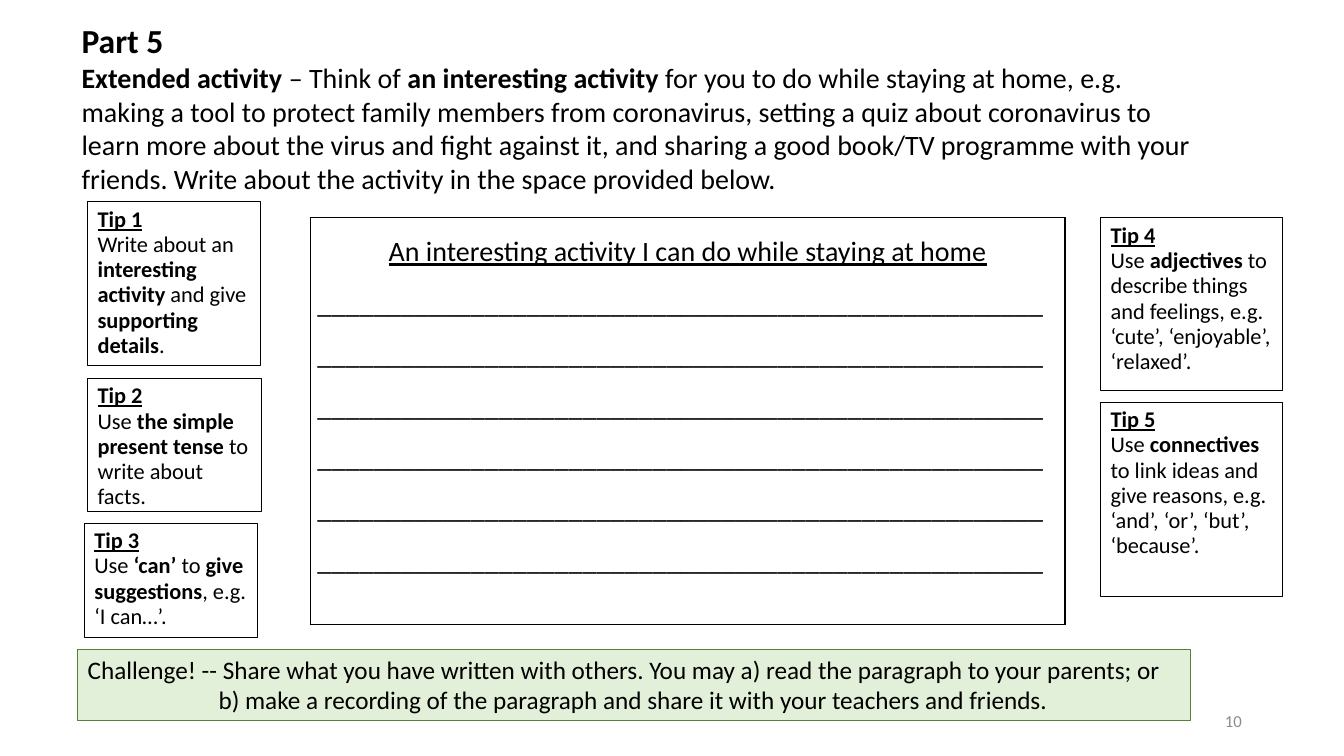
"""Build the Part 5 writing activity slide."""
from dataclasses import dataclass

from lxml import etree
from pptx import Presentation
from pptx.dml.color import RGBColor
from pptx.enum.shapes import MSO_SHAPE
from pptx.enum.text import MSO_ANCHOR, MSO_AUTO_SIZE, PP_ALIGN
from pptx.oxml.ns import qn
from pptx.util import Cm, Pt

RECT = MSO_SHAPE.RECTANGLE
TOP, MIDDLE = MSO_ANCHOR.TOP, MSO_ANCHOR.MIDDLE
LEFT, CENTER, RIGHT = PP_ALIGN.LEFT, PP_ALIGN.CENTER, PP_ALIGN.RIGHT
NO_AUTOFIT = MSO_AUTO_SIZE.NONE


@dataclass(frozen=True)
class Theme:
    font: str = "Calibri"
    black: RGBColor = RGBColor(0, 0, 0)
    white: RGBColor = RGBColor(255, 255, 255)
    grey: RGBColor = RGBColor(0x8C, 0x8C, 0x8C)
    pale_green: RGBColor = RGBColor(0xE2, 0xF0, 0xD9)
    green: RGBColor = RGBColor(0x54, 0x82, 0x35)
    heading: Pt = Pt(24)
    body: Pt = Pt(20)
    challenge: Pt = Pt(18)
    tip: Pt = Pt(16)
    number: Pt = Pt(12)


T = Theme()


def write(p, text, size, color=T.black, align=LEFT):
    """Fill a paragraph, with the parts between asterisks in bold."""
    p.alignment = align
    p.font.name, p.font.size, p.font.color.rgb = T.font, size, color
    for i, part in enumerate(text.split("*")):
        if part:
            r = p.add_run()
            r.text, r.font.bold = part, i % 2 == 1


def add_box(s, place, fill, line, width):
    """Add an outlined rectangle and return its text frame."""
    sp = s.shapes.add_shape(RECT, *map(Cm, place))
    sp.shadow.inherit = False
    sp.fill.solid()
    sp.fill.fore_color.rgb = fill
    sp.line.color.rgb, sp.line.width = line, width
    tf = sp.text_frame
    tf.word_wrap, tf.vertical_anchor = True, TOP
    return tf


prs = Presentation()
prs.slide_width, prs.slide_height = Cm(33.87), Cm(19.05)
s = prs.slides.add_slide(prs.slide_layouts[5])

title = s.shapes.title
title.left, title.top, title.width, title.height = map(Cm, (1.8, 0.38, 28.98, 5.89))
tf = title.text_frame
tf.word_wrap, tf.vertical_anchor, tf.auto_size = True, TOP, NO_AUTOFIT
write(tf.paragraphs[0], "*Part 5*", T.heading)
write(
    tf.add_paragraph(),
    "*Extended activity *– Think of *an interesting activity *for you to do while "
    "staying at home, e.g. making a tool to protect family members from coronavirus, "
    "setting a quiz about coronavirus to learn more about the virus and fight against "
    "it, and sharing a good book/TV programme with your friends. Write about the "
    "activity in the space provided below.",
    T.body,
)

tips = [
    ((2.21, 5.08, 4.35, 4.14),
     "Write about an *interesting activity *and give *supporting details*."),
    ((2.21, 9.53, 4.37, 3.35),
     "Use *the simple present tense *to write about facts."),
    ((2.13, 13.18, 4.37, 2.87),
     "Use *‘can’ *to* give suggestions*, e.g. ‘I can…’."),
    ((27.74, 5.49, 4.57, 4.34),
     "Use *adjectives* to describe things and feelings, e.g. ‘cute’, ‘enjoyable’, "
     "‘relaxed’."),
    ((27.74, 10.13, 4.57, 4.9),
     "Use *connectives* to link ideas and give reasons, e.g. ‘and’, ‘or’, ‘but’, "
     "‘because’."),
]
for number, (place, advice) in enumerate(tips, 1):
    tf = add_box(s, place, T.white, T.black, Pt(0.5))
    write(tf.paragraphs[0], f"*Tip {number}*", T.tip)
    tf.paragraphs[0].font.underline = True
    write(tf.add_paragraph(), advice, T.tip)
    for p in tf.paragraphs:
        p.line_spacing = Pt(18)

table = s.shapes.add_table(1, 1, Cm(7.82), Cm(5.49), Cm(19.02), Cm(10.24)).table
table.first_row = table.horz_banding = False
cell = table.cell(0, 0)
cell.margin_left = cell.margin_right = Cm(0.18)
cell.margin_top = cell.margin_bottom = 0
tcPr = cell._tc.get_or_add_tcPr()
for side in ("a:lnL", "a:lnR", "a:lnT", "a:lnB"):
    ln = etree.SubElement(tcPr, qn(side), w=str(Pt(1)))
    fill = etree.SubElement(ln, qn("a:solidFill"))
    etree.SubElement(fill, qn("a:srgbClr"), val=str(T.black))
cell.fill.background()
tf = cell.text_frame
write(tf.paragraphs[0], "An interesting activity I can do while staying at home",
      T.body, align=CENTER)
tf.paragraphs[0].font.underline = True
for _ in range(6):
    write(tf.add_paragraph(), "_" * 52, T.body)
for p in tf.paragraphs:
    p.line_spacing = 1.5

tf = add_box(s, (1.96, 16.36, 28.04, 1.8), T.pale_green, T.green, Pt(0.75))
write(tf.paragraphs[0],
      "Challenge! -- Share what you have written with others. You may a) read the "
      "paragraph to your parents; or", T.challenge)
p = tf.add_paragraph()
write(p, "b) make a recording of the paragraph and share it with your teachers and "
      "friends.", T.challenge)
p._p.get_or_add_pPr().set("marL", str(Cm(3.3)))

tf = s.shapes.add_textbox(Cm(23.93), Cm(17.65), Cm(7.62), Cm(1.02)).text_frame
tf.word_wrap, tf.vertical_anchor = True, MIDDLE
write(tf.paragraphs[0], "10", T.number, T.grey, RIGHT)

prs.save("out.pptx")
